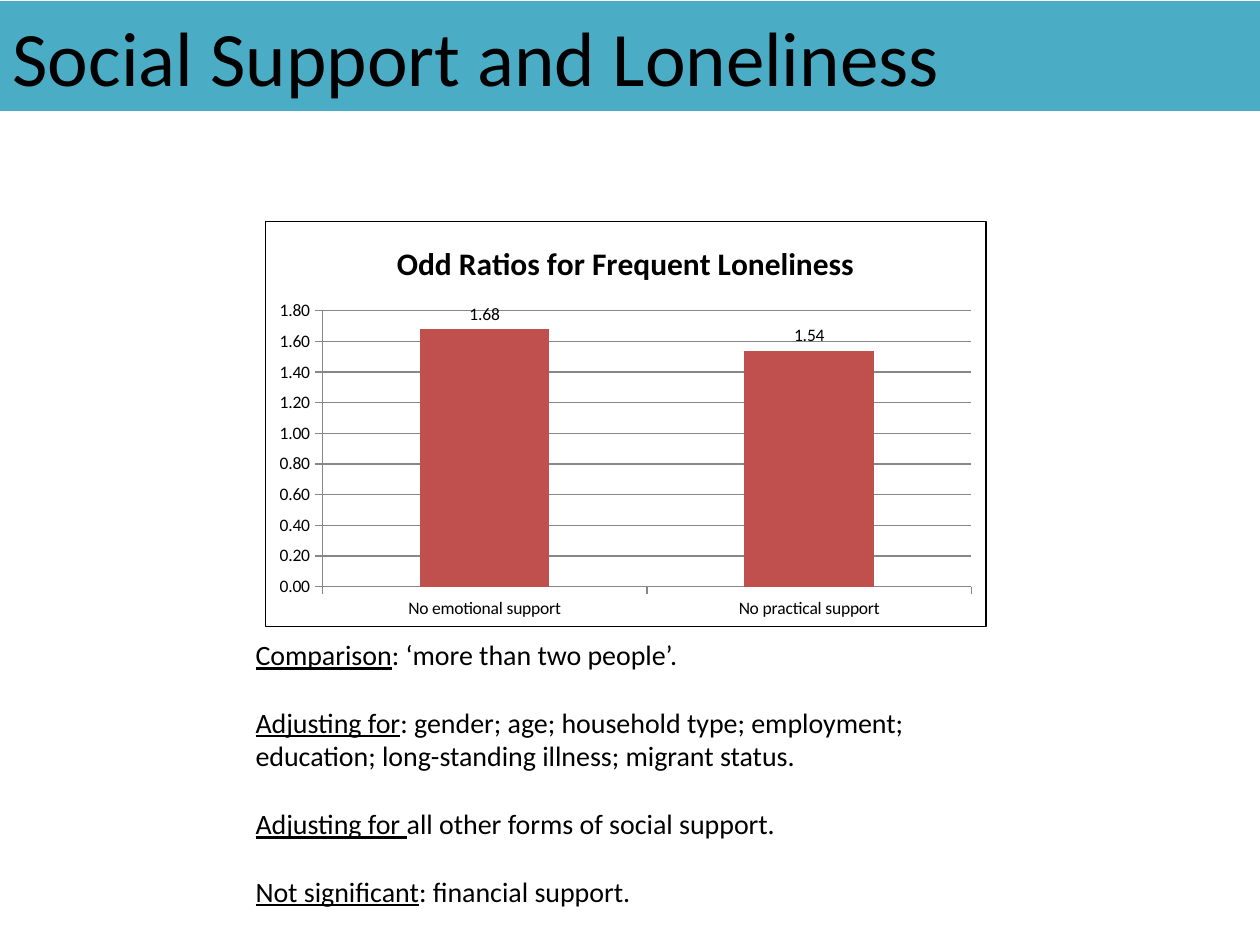
from lxml import etree
from pptx import Presentation
from pptx.chart.data import CategoryChartData
from pptx.dml.color import RGBColor
from pptx.enum.chart import XL_CHART_TYPE, XL_LABEL_POSITION, XL_TICK_MARK
from pptx.enum.text import MSO_ANCHOR, MSO_AUTO_SIZE, PP_ALIGN
from pptx.oxml import parse_xml
from pptx.util import Inches, Pt

COLUMNS = XL_CHART_TYPE.COLUMN_CLUSTERED
OUTSIDE_END = XL_LABEL_POSITION.OUTSIDE_END
TICK_OUTSIDE = XL_TICK_MARK.OUTSIDE
MIDDLE = MSO_ANCHOR.MIDDLE
NO_AUTOFIT = MSO_AUTO_SIZE.NONE
LEFT = PP_ALIGN.LEFT

BLACK, TEAL, RED, GREY = "000000", "4BACC6", "C0504D", "878787"
NOTES = [
    ("Comparison", ": ‘more than two people’."),
    ("Adjusting for", ": gender; age; household type; employment; "
     "education; long-standing illness; migrant status."),
    ("Adjusting for ", "all other forms of social support."),
    ("Not significant", ": financial support."),
]
RATIOS = {"No emotional support": 1.68, "No practical support": 1.54}
CHART_BORDER = (
    '<c:spPr xmlns:c="http://schemas.openxmlformats.org/drawingml/2006/chart" '
    'xmlns:a="http://schemas.openxmlformats.org/drawingml/2006/main">'
    '<a:solidFill><a:srgbClr val="FFFFFF"/></a:solidFill>'
    '<a:ln w="9525"><a:solidFill><a:srgbClr val="000000"/></a:solidFill></a:ln>'
    '</c:spPr>'
)


def color(value):
    """Return the colour for a hex string."""
    return RGBColor.from_string(value)


def set_attributes(target, values):
    """Set each attribute of the target from a dict."""
    for name, value in values.items():
        setattr(target, name, value)


def format_font(font, size, **values):
    """Give a font the slide's typeface, colour and a size."""
    set_attributes(font, {"name": "Calibri", "size": Pt(size), **values})
    font.color.rgb = color(BLACK)


def add_title(slide, text):
    """Turn the title placeholder into a full-width band."""
    title = slide.shapes.title
    set_attributes(title, {"left": Inches(0), "top": Inches(0.01),
                           "width": Inches(10), "height": Inches(0.87)})
    title.fill.solid()
    title.fill.fore_color.rgb = color(TEAL)
    frame = title.text_frame
    set_attributes(frame, {"text": text, "vertical_anchor": MIDDLE,
                           "auto_size": NO_AUTOFIT})
    paragraph = frame.paragraphs[0]
    paragraph.alignment = LEFT
    format_font(paragraph.runs[0].font, 44)


def format_axes(chart):
    """Set the scale, ticks and lines of both axes."""
    for axis in (chart.category_axis, chart.value_axis):
        axis.major_tick_mark = TICK_OUTSIDE
        axis.format.line.color.rgb = color(GREY)
        format_font(axis.tick_labels.font, 10)
    value_axis = chart.value_axis
    set_attributes(value_axis, {"minimum_scale": 0, "maximum_scale": 1.8,
                                "major_unit": 0.2, "has_major_gridlines": True})
    value_axis.major_gridlines.format.line.color.rgb = color(GREY)
    set_attributes(value_axis.tick_labels, {"number_format": "#,##0.00",
                                            "number_format_is_linked": False})


def add_ratio_chart(slide, title, ratios):
    """Add the bordered column chart of odds ratios."""
    data = CategoryChartData(number_format="0.00")
    data.categories = list(ratios)
    data.add_series("Series 1", list(ratios.values()))
    chart = slide.shapes.add_chart(COLUMNS, Inches(2.1), Inches(1.75),
                                   Inches(5.73), Inches(3.23), data).chart
    set_attributes(chart, {"has_legend": False, "has_title": True})
    format_font(chart.font, 10)
    chart.chart_title.text_frame.text = title
    run = chart.chart_title.text_frame.paragraphs[0].runs[0]
    format_font(run.font, 18, bold=True)
    format_axes(chart)
    plot = chart.plots[0]
    set_attributes(plot, {"gap_width": 150, "vary_by_categories": False,
                          "has_data_labels": True})
    set_attributes(plot.data_labels, {"show_value": True, "position": OUTSIDE_END})
    format_font(plot.data_labels.font, 10)
    fill = plot.series[0].format.fill
    fill.solid()
    fill.fore_color.rgb = color(RED)
    chart.element.chart.addnext(parse_xml(CHART_BORDER)) if hasattr(
        chart, "element") else chart._chartSpace.chart.addnext(parse_xml(CHART_BORDER))


def add_notes(slide, notes):
    """Add the spaced paragraphs with underlined lead words."""
    box = slide.shapes.add_textbox(Inches(1.93), Inches(5.01),
                                   Inches(6.06), Inches(2.26))
    frame = box.text_frame
    frame.word_wrap = True
    for index, (lead, detail) in enumerate(notes):
        paragraph = frame.add_paragraph() if index else frame.paragraphs[0]
        paragraph.space_before = Pt(19.5 if index else 0)
        for text, underline in ((lead, True), (detail, False)):
            run = paragraph.add_run()
            run.text = text
            format_font(run.font, 16, underline=underline)


def main():
    """Build and save the slide."""
    presentation = Presentation()
    set_attributes(presentation, {"slide_width": Inches(10),
                                  "slide_height": Inches(7.5)})
    slide = presentation.slides.add_slide(presentation.slide_layouts[5])
    add_notes(slide, NOTES)
    add_title(slide, "Social Support and Loneliness")
    add_ratio_chart(slide, "Odd Ratios for Frequent Loneliness", RATIOS)
    presentation.save("out.pptx")


if __name__ == "__main__":
    main()
